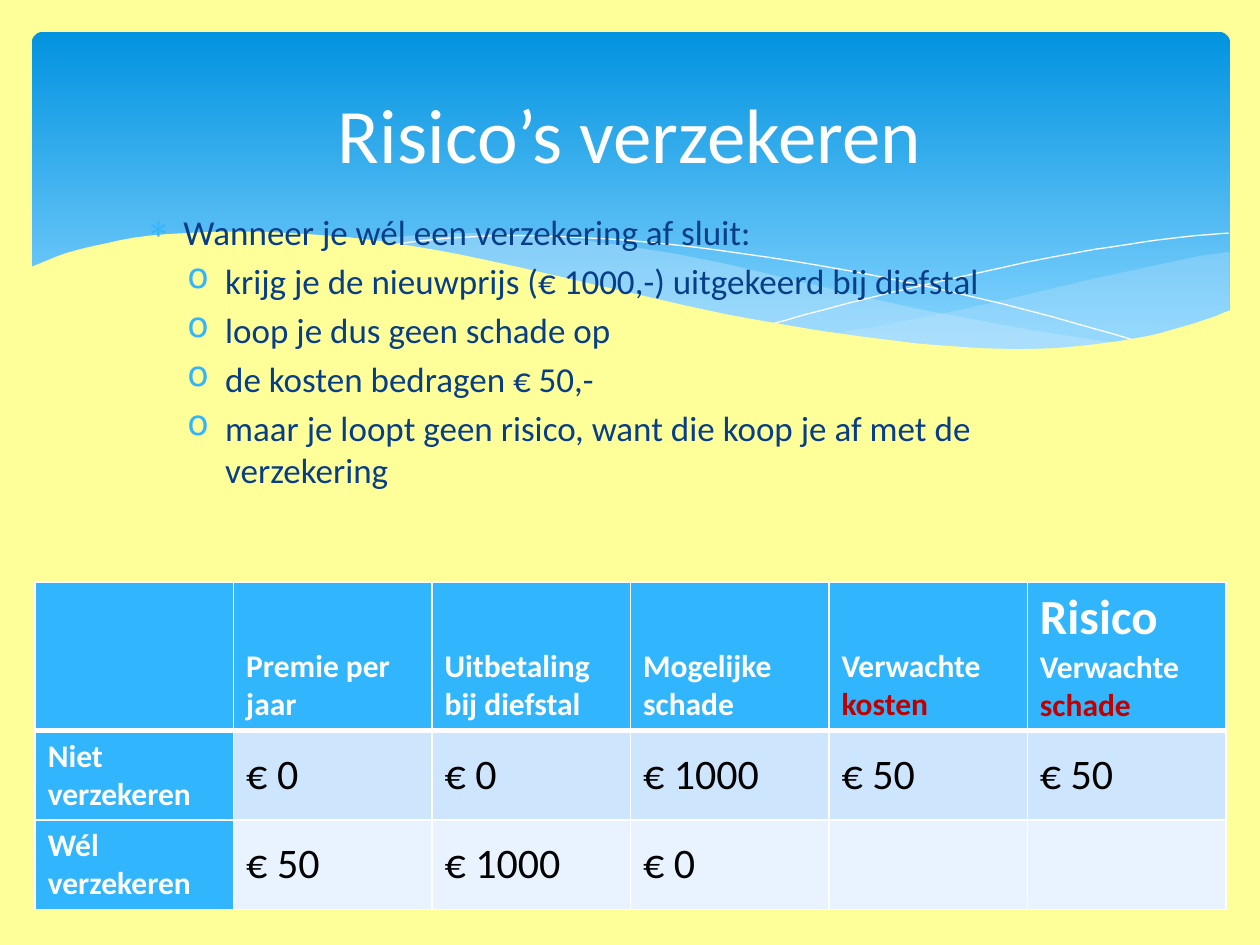
"""Build a slide on insuring risks: wave banner, bullet list and cost table."""
from dataclasses import dataclass

from lxml.etree import SubElement
from pptx import Presentation
from pptx.dml.color import RGBColor as Rgb
from pptx.enum.shapes import MSO_SHAPE as Shape
from pptx.enum.text import MSO_ANCHOR as Anchor, PP_ALIGN as Align
from pptx.oxml.ns import qn
from pptx.util import Cm, Pt


@dataclass(frozen=True)
class Theme:
    """Colours and type sizes of the slide."""
    font: str = "Calibri"
    paper: str = "FFFF99"
    sky_top: str = "0293E0"
    sky_bottom: str = "83D3FE"
    mist: str = "C6E7FC"
    white: str = "FFFFFF"
    black: str = "000000"
    navy: str = "073E87"
    accent: str = "31B6FD"
    red: str = "C00000"
    bands: tuple = ("CEE5FE", "E8F3FF")
    title: int = 44
    body: int = 20
    label: int = 18
    risk: int = 28
    value: int = 24


THEME = Theme()

RIGHT_WAVE = (
    ((24.79, 5.08), (24.08, 5.18), (23.01, 5.41), (21.87, 5.66), (19.79, 6.15),
     (17.93, 6.53), (16.79, 6.73)),
    ((16.79, 6.73), (18.26, 6.91), (19.84, 7.04), (20.93, 7.04), (22.15, 6.96),
     (23.39, 6.73), (24.79, 6.27)),
)
MIDDLE_WAVE = (
    ((22.68, 6.93), (21.26, 6.73), (19.69, 6.45), (17.93, 6.1), (15.98, 5.64),
     (14.45, 5.28), (13.06, 5.03), (11.81, 4.85), (10.67, 4.75), (9.17, 4.7),
     (7.95, 4.78), (7.26, 4.85)),
    ((7.26, 4.85), (8.69, 5.05), (10.26, 5.36), (11.4, 5.64), (13.46, 6.1),
     (15.27, 6.48), (16.89, 6.76), (18.34, 6.96), (19.94, 7.06), (21.29, 7.06),
     (22.68, 6.93)),
)
FALLING_LINE = (
    (7.85, 4.95), (8.74, 4.83), (10.19, 4.75), (11.91, 4.8), (13.54, 4.93),
    (15.44, 5.18), (17.65, 5.56), (20.19, 6.12), (22.07, 6.63), (23.04, 6.91))
RISING_LINE = (
    (15.57, 6.53), (17.07, 6.12), (19, 5.66), (21.23, 5.18), (22.73, 4.93),
    (23.83, 4.78), (24.77, 4.7))
PAPER_EDGE = (
    (24.82, 6.25), (24.13, 6.5), (23.11, 6.78), (21.92, 6.96), (20.55, 7.04),
    (18.9, 6.96), (16.97, 6.73), (14.71, 6.35), (12.78, 5.92), (11.35, 5.59),
    (9.27, 5.13), (7.42, 4.83), (5.84, 4.7), (4.5, 4.67), (3.02, 4.75),
    (1.93, 4.95), (1.17, 5.16), (0.58, 5.41))
PAPER_CORNERS = ((0.58, 8.36), (24.82, 8.36))

BULLETS = (
    "Wanneer je wél een verzekering af sluit:",
    "krijg je de nieuwprijs (€ 1000,-) uitgekeerd bij diefstal",
    "loop je dus geen schade op",
    "de kosten bedragen € 50,-",
    "maar je loopt geen risico, want die koop je af met de verzekering",
)
HEADERS = ("", "Premie per jaar", "Uitbetaling bij diefstal", "Mogelijke schade")
ROWS = (
    ("Niet verzekeren", "€ 0", "€ 0", "€ 1000", "€ 50", "€ 50"),
    ("Wél verzekeren", "€ 50", "€ 1000", "€ 0", "", ""),
)


def apply_format(target, values):
    """Set every attribute named in a dict of format values."""
    for name, value in values.items():
        setattr(target, name, value)


def add_run(paragraph, text, size, color, bold=False):
    """Add one formatted run to a paragraph."""
    run = paragraph.add_run()
    run.text = text
    apply_format(run.font, {"name": THEME.font, "size": Pt(size), "bold": bold})
    run.font.color.rgb = Rgb.from_string(color)


def paint(fill, color):
    """Give a fill one solid colour."""
    fill.solid()
    fill.fore_color.rgb = Rgb.from_string(color)


def smooth(knots, steps=4):
    """Return points on a Catmull-Rom curve through the knots."""
    padded = (knots[0], *knots, knots[-1])
    points = [knots[0]]
    for a, b, c, d in zip(padded, padded[1:], padded[2:], padded[3:]):
        for step in range(1, steps + 1):
            t = step / steps
            points.append(tuple(
                (2 * q + (r - p) * t + (2 * p - 5 * q + 4 * r - s) * t ** 2
                 + (3 * q - p - 3 * r + s) * t ** 3) / 2
                for p, q, r, s in zip(a, b, c, d)))
    return points


def add_outline(slide, points, color, closed=True, opacity=100):
    """Draw a filled area, or a hairline when the outline is open."""
    units = [(x * 100, y * 100) for x, y in points]
    builder = slide.shapes.build_freeform(*units[0], scale=Cm(0.01))
    builder.add_line_segments(units[1:], close=closed)
    shape = builder.convert_to_shape()
    shape.shadow.inherit = False
    if closed:
        paint(shape.fill, color)
        shape.line.fill.background()
        if opacity < 100:
            tint = shape.fill._xPr.find(".//" + qn("a:srgbClr"))
            SubElement(tint, qn("a:alpha"), val=str(opacity * 1000))
    else:
        shape.fill.background()
        paint(shape.line.fill, color)
        shape.line.width = Pt(0)


def add_banner(slide):
    """Draw the rounded gradient panel and its waves."""
    panel = slide.shapes.add_shape(
        Shape.ROUNDED_RECTANGLE, Cm(0.64), Cm(0.64), Cm(24.16), Cm(6.86))
    panel.adjustments[0] = 0.034
    panel.shadow.inherit = False
    panel.line.fill.background()
    panel.fill.gradient()
    panel.fill.gradient_angle = 270
    stops = ((0, THEME.sky_top), (0.9, THEME.sky_bottom))
    for stop, (position, color) in zip(panel.fill.gradient_stops, stops):
        stop.position = position
        stop.color.rgb = Rgb.from_string(color)
    for (upper, lower), opacity in ((RIGHT_WAVE, 29), (MIDDLE_WAVE, 40)):
        add_outline(slide, smooth(upper) + smooth(lower), THEME.mist, opacity=opacity)
    for curve in (FALLING_LINE, RISING_LINE):
        add_outline(slide, smooth(curve), THEME.white, closed=False)
    add_outline(slide, [*smooth(PAPER_EDGE), *PAPER_CORNERS], THEME.paper)


def add_text_frame(slide, box, anchor):
    """Add a wrapping text box and return its text frame."""
    frame = slide.shapes.add_textbox(*map(Cm, box)).text_frame
    apply_format(frame, {"word_wrap": True, "vertical_anchor": anchor})
    return frame


def add_bullet(paragraph, character, indent):
    """Give a paragraph a coloured bullet with a hanging indent."""
    properties = paragraph._p.get_or_add_pPr()
    properties.set("marL", str(Cm(indent)))
    properties.set("indent", str(Cm(-0.76)))
    color = SubElement(properties, qn("a:buClr"))
    SubElement(color, qn("a:srgbClr"), val=THEME.accent)
    SubElement(properties, qn("a:buChar"), char=character)


def add_bullets(slide):
    """Write the lead sentence and its sub-points."""
    frame = add_text_frame(slide, (2.69, 4.11, 20.57, 6.81), Anchor.TOP)
    for index, text in enumerate(BULLETS):
        paragraph = frame.add_paragraph() if index else frame.paragraphs[0]
        apply_format(paragraph, {"space_before": Pt(4), "level": min(index, 1)})
        add_bullet(paragraph, *(("o", 1.6) if index else ("∗", 0.76)))
        add_run(paragraph, text, THEME.body, THEME.navy)


def add_title(slide):
    """Write the centred title."""
    frame = add_text_frame(slide, (1.27, 0.94, 22.86, 3.48), Anchor.MIDDLE)
    paragraph = frame.paragraphs[0]
    paragraph.alignment = Align.CENTER
    add_run(paragraph, "Risico’s verzekeren", THEME.title, THEME.white)


def style_cell(cell, color, anchor, top=1, bottom=1):
    """Set the borders, fill and anchor of a table cell."""
    properties = cell._tc.get_or_add_tcPr()
    for side, width in (("L", 1), ("R", 1), ("T", top), ("B", bottom)):
        border = SubElement(properties, qn(f"a:ln{side}"), w=str(Pt(width)))
        solid = SubElement(border, qn("a:solidFill"))
        SubElement(solid, qn("a:srgbClr"), val=THEME.white)
    paint(cell.fill, color)
    cell.vertical_anchor = anchor


def fill_header(table):
    """Write the header row with its two highlighted words."""
    cells = [table.cell(0, column) for column in range(6)]
    for cell in cells:
        style_cell(cell, THEME.accent, Anchor.BOTTOM, bottom=3)
    for cell, text in zip(cells, HEADERS):
        if text:
            add_run(cell.text_frame.paragraphs[0], text, THEME.label, THEME.white, True)
    costs, damage = (cell.text_frame for cell in cells[4:])
    add_run(damage.paragraphs[0], "Risico", THEME.risk, THEME.white, True)
    endings = ((costs.paragraphs[0], "kosten"), (damage.add_paragraph(), "schade"))
    for paragraph, word in endings:
        add_run(paragraph, "Verwachte ", THEME.label, THEME.white, True)
        add_run(paragraph, word, THEME.label, THEME.red, True)


def add_cost_table(slide):
    """Add the table that compares the two choices."""
    table = slide.shapes.add_table(
        3, 6, Cm(0.71), Cm(11.73), Cm(24), Cm(6.6)).table
    for row, height in zip(table.rows, (3, 1.8, 1.8)):
        row.height = Cm(height)
    fill_header(table)
    for row, (texts, band) in enumerate(zip(ROWS, THEME.bands), 1):
        for column, text in enumerate(texts):
            cell = table.cell(row, column)
            fill, anchor = (band, Anchor.MIDDLE) if column else (THEME.accent, Anchor.TOP)
            style_cell(cell, fill, anchor, top=3 if row == 1 else 1)
            style = (THEME.value, THEME.black) if column else (THEME.label, THEME.white, True)
            if text:
                add_run(cell.text_frame.paragraphs[0], text, *style)


def main():
    """Build and save the presentation."""
    presentation = Presentation()
    apply_format(presentation, {"slide_width": Cm(25.4), "slide_height": Cm(19.05)})
    slide = presentation.slides.add_slide(presentation.slide_layouts[6])
    paint(slide.background.fill, THEME.paper)
    for add_part in (add_banner, add_bullets, add_title, add_cost_table):
        add_part(slide)
    presentation.save("out.pptx")


if __name__ == "__main__":
    main()
